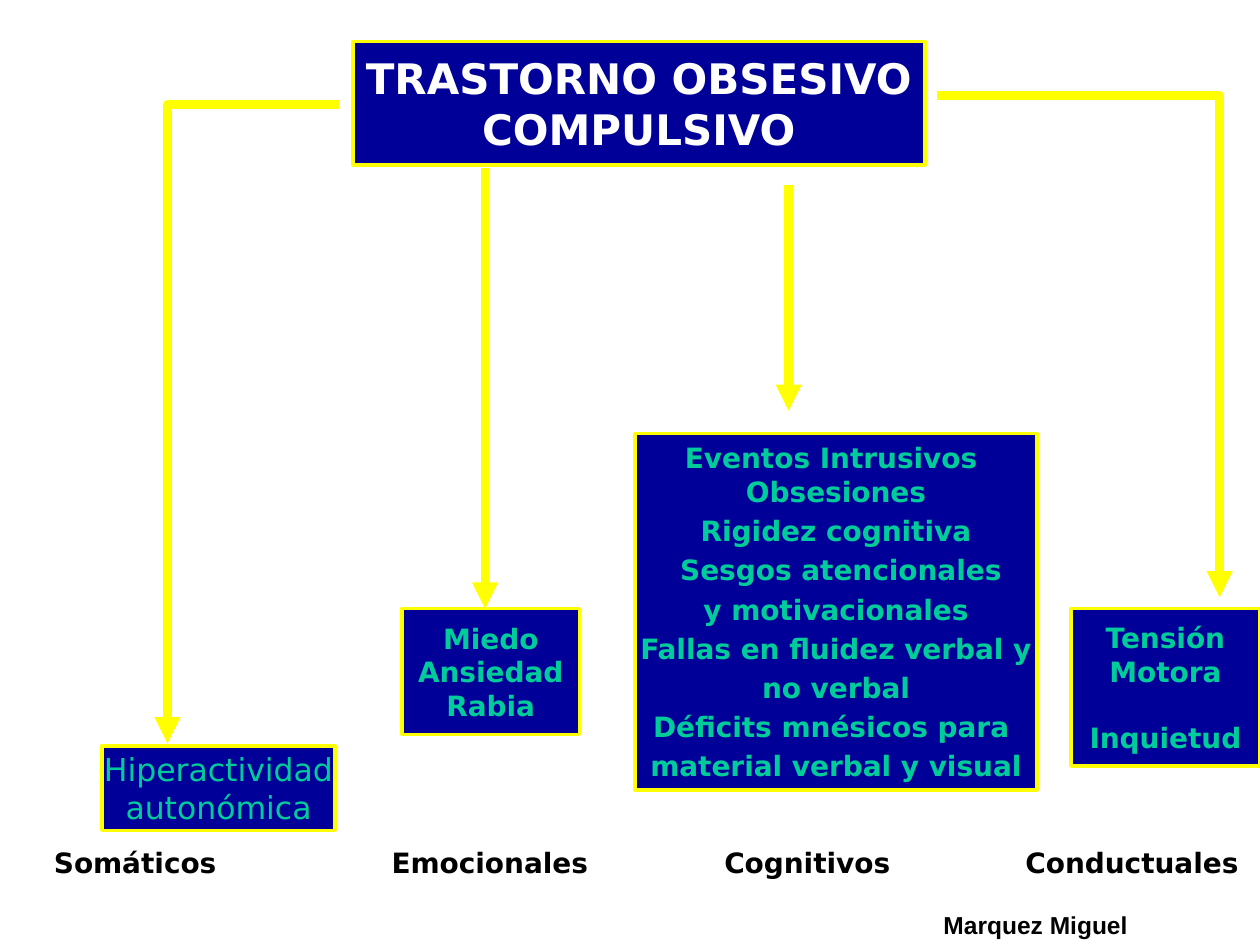
"""Build a slide that maps the four symptom groups of a disorder."""
from pptx import Presentation
from pptx.dml.color import RGBColor
from pptx.enum.shapes import MSO_CONNECTOR, MSO_SHAPE
from pptx.enum.text import MSO_ANCHOR, MSO_AUTO_SIZE, PP_ALIGN
from pptx.oxml.ns import qn
from pptx.util import Inches, Pt
from lxml import etree

RECT = MSO_SHAPE.RECTANGLE
BENT, LINE = MSO_CONNECTOR.ELBOW, MSO_CONNECTOR.STRAIGHT
MIDDLE, TOP = MSO_ANCHOR.MIDDLE, MSO_ANCHOR.TOP
CENTER, LEFT = PP_ALIGN.CENTER, PP_ALIGN.LEFT
NONE = MSO_AUTO_SIZE.NONE
NAVY, YELLOW, GREEN, WHITE, BLACK = "000099", "FFFF00", "00CC99", "FFFFFF", "000000"
SANS = "DejaVu Sans"


def paint(part, color):
    part.solid()
    part.fore_color.rgb = RGBColor.from_string(color)


def write(frame, lines, align, form, color):
    for i, (text, gap) in enumerate(lines):
        para = frame.paragraphs[0] if i == 0 else frame.add_paragraph()
        para.alignment = align
        para.space_before = Pt(gap)
        run = para.add_run()
        run.text = text
        for key, value in form.items():
            setattr(run.font, key, value)
        paint(run.font.fill, color)


deck = Presentation()
deck.slide_width, deck.slide_height = Inches(10), Inches(7.5)
slide = deck.slides.add_slide(deck.slide_layouts[5])
paint(slide.background.fill, WHITE)

title = slide.shapes.title
boxes = [
    (title, (2.8, 0.33, 4.54, 0.98), 24, True, WHITE,
     [("TRASTORNO OBSESIVO ", 0), ("COMPULSIVO", 0)]),
    (None, (0.81, 5.92, 1.85, 0.67), 18, False, GREEN,
     [("Hiperactividad", 0), ("autonómica", 0)]),
    (None, (3.19, 4.83, 1.41, 1), 16, True, GREEN,
     [("Miedo", 0), ("Ansiedad", 0), ("Rabia", 0)]),
    (None, (5.04, 3.44, 3.19, 2.83), 16, True, GREEN,
     [("Eventos Intrusivos ", 0), ("Obsesiones", 0), ("Rigidez cognitiva", 3.2),
      (" Sesgos atencionales", 3.2), ("y motivacionales", 3.2),
      ("Fallas en fluidez verbal y", 3.2), ("no verbal", 3.2),
      ("Déficits mnésicos para ", 3.2), ("material verbal y visual", 3.2)]),
    (None, (8.5, 4.83, 1.5, 1.25), 16, True, GREEN,
     [("Tensión", 0), ("Motora", 0), ("Inquietud", 18.7)]),
]
for box, place, size, bold, color, lines in boxes:
    spot = [Inches(n) for n in place]
    if box is None:
        box = slide.shapes.add_shape(RECT, *spot)
        box.shadow.inherit = False
    box.left, box.top, box.width, box.height = spot
    paint(box.fill, NAVY)
    paint(box.line.fill, YELLOW)
    box.line.width = Pt(2)
    frame = box.text_frame
    frame.auto_size = NONE
    frame.word_wrap = False
    frame.vertical_anchor = MIDDLE
    write(frame, lines, CENTER, {"size": Pt(size), "name": SANS, "bold": bold}, color)

arrows = [
    (BENT, 2.69, 0.83, 1.33, 5.9),
    (BENT, 7.44, 0.76, 9.68, 4.74),
    (LINE, 3.85, 1.33, 3.85, 4.83),
    (LINE, 6.26, 1.47, 6.26, 3.26),
]
for kind, *ends in arrows:
    arrow = slide.shapes.add_connector(kind, *[Inches(n) for n in ends])
    paint(arrow.line.fill, YELLOW)
    arrow.line.width = Pt(5)
    props = arrow._element.spPr
    if kind == BENT:
        props.find(qn("a:prstGeom")).set("prst", "bentConnector2")
    etree.SubElement(props.find(qn("a:ln")), qn("a:tailEnd"), type="triangle")
    etree.SubElement(props, qn("a:effectLst"))

foot = slide.shapes.add_textbox(Inches(0.33), Inches(6.66), Inches(9.67), Inches(0.83))
frame = foot.text_frame
frame.word_wrap = True
frame.vertical_anchor = TOP
groups = "Somáticos\tEmocionales\tCognitivos\tConductuales"
write(frame, [(groups, 0), ("Marquez Miguel", 18)], LEFT,
      {"size": Pt(16), "name": SANS, "bold": True}, BLACK)
heads, author = frame.paragraphs
stops = etree.SubElement(heads._p.get_or_add_pPr(), qn("a:tabLst"))
for stop in (2.68, 5.32, 7.71):
    etree.SubElement(stops, qn("a:tab"), pos=str(Inches(stop)), algn="l")
author._p.get_or_add_pPr().set("marL", str(Inches(7.06)))
font = author.runs[0].font
font.size, font.name = Pt(14), "Arial"

deck.save("out.pptx")
